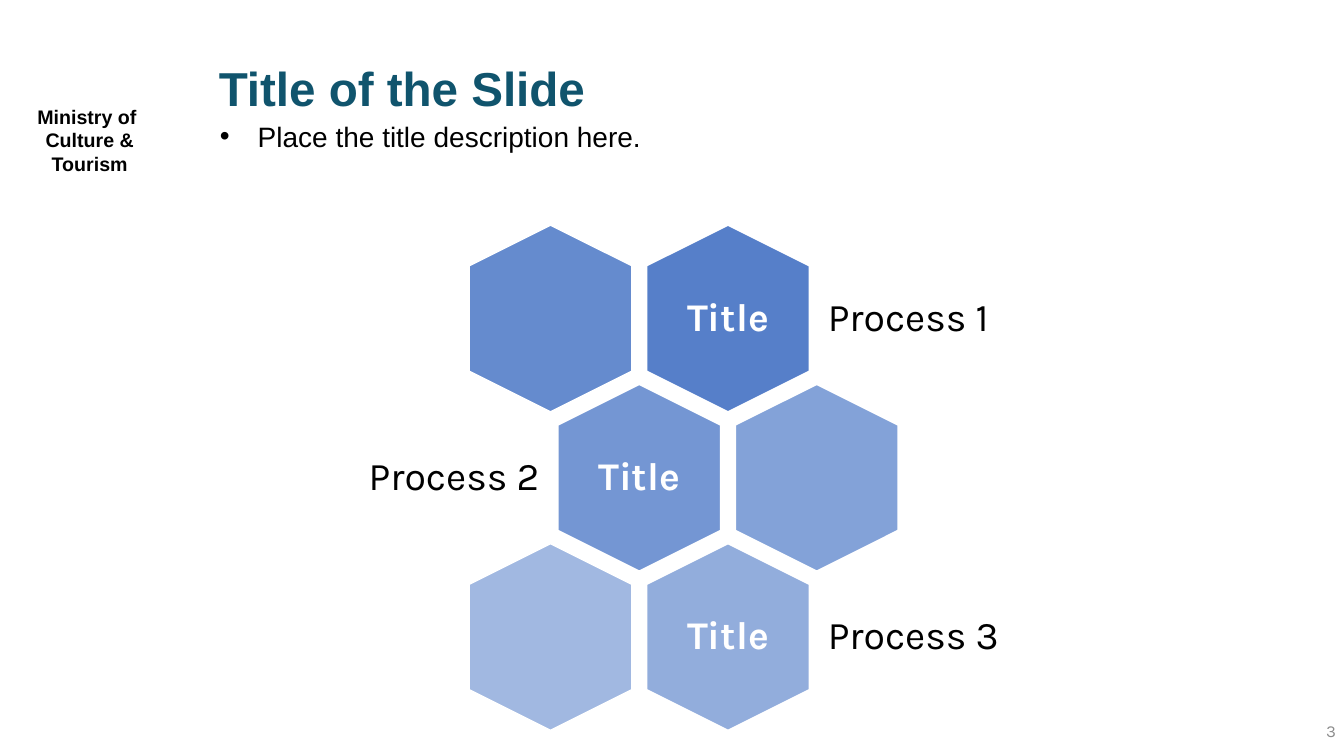
import pptx
import pptx.dml.color
import pptx.enum.shapes
import pptx.enum.text
import pptx.oxml
import pptx.oxml.ns
import pptx.util

Inches, Pt = pptx.util.Inches, pptx.util.Pt
ALIGN = pptx.enum.text.PP_ALIGN
ANCHOR = pptx.enum.text.MSO_ANCHOR


def color(hex_string):
    return pptx.dml.color.RGBColor.from_string(hex_string)


def write(shape, box, text, font, size, hex_string, bold=False, align=ALIGN.LEFT,
          anchor=ANCHOR.TOP, inset=0.0, spacing=1.0):
    """Place a text shape at box (left, top, width, height) and fill it, one paragraph a line."""
    shape.left, shape.top, shape.width, shape.height = map(Inches, box)
    frame = shape.text_frame
    frame.text = text
    frame.word_wrap = True
    frame.auto_size = pptx.enum.text.MSO_AUTO_SIZE.NONE
    frame.vertical_anchor = anchor
    frame.margin_left = frame.margin_right = Inches(inset)
    frame.margin_top = frame.margin_bottom = Inches(inset)
    for paragraph in frame.paragraphs:
        paragraph.alignment = align
        paragraph.line_spacing = spacing
        paragraph.space_before = Pt(0)
        paragraph.font.name = font
        paragraph.font.size = Pt(size)
        paragraph.font.bold = bold
        paragraph.font.color.rgb = color(hex_string)


presentation = pptx.Presentation()
presentation.slide_width = Inches(13.33)
presentation.slide_height = Inches(7.5)
slide = presentation.slides.add_slide(presentation.slide_layouts[1])
shapes = slide.shapes

# Heading
write(shapes.title, (2.17, 0.6, 8.38, 0.53), "Title of the Slide", "Arial", 34, "10546D",
      bold=True, spacing=Pt(40))
description = slide.placeholders[1]
properties = description.text_frame.paragraphs[0]._p.get_or_add_pPr()
properties.set("marL", "0")
properties.set("indent", "0")
pptx.oxml.ns.qn("a:buNone")
properties.append(pptx.oxml.parse_xml(
    '<a:buNone xmlns:a="http://schemas.openxmlformats.org/drawingml/2006/main"/>'))
write(description, (2.18, 1.29, 8.45, 0.68), "Place the title description here.", "Arial", 20,
      "000000", spacing=Pt(16.5))
ministry = shapes.add_textbox(0, 0, 0, 0)
write(ministry, (0, 0.99, 1.78, 0.8), "Ministry of \nCulture & Tourism", "Arial", 14, "000000",
      bold=True, align=ALIGN.CENTER)
ministry.text_frame.margin_left = ministry.text_frame.margin_right = Inches(0.1)
ministry.text_frame.margin_top = Inches(0.05)

# Honeycomb: odd rows are shifted by half a hexagon pitch
FIRST_X, FIRST_Y = 5.46, 3.16
HALF_PITCH, ROW_PITCH = 0.88, 1.58
HEX_LENGTH, HEX_WIDTH = 1.86, 1.62
LABEL_GAP, LABEL_WIDTH, LABEL_HEIGHT = 0.87, 2.08, 1.12
cells = [  # half column, row, label
    (2, 0, "Process 1"), (0, 0, None),
    (1, 1, "Process 2"), (3, 1, None),
    (2, 2, "Process 3"), (0, 2, None),
]
for index, (half_column, row, label) in enumerate(cells):
    x = FIRST_X + half_column * HALF_PITCH
    y = FIRST_Y + row * ROW_PITCH
    hexagon = shapes.add_shape(
        pptx.enum.shapes.MSO_SHAPE.HEXAGON, Inches(x - HEX_LENGTH / 2),
        Inches(y - HEX_WIDTH / 2), Inches(HEX_LENGTH), Inches(HEX_WIDTH))
    hexagon.rotation = 90
    hexagon.shadow.inherit = False
    hexagon.fill.solid()
    hexagon.fill.fore_color.rgb = color("4472C4")
    fill_color = hexagon._element.spPr.find(".//" + pptx.oxml.ns.qn("a:srgbClr"))
    alpha = fill_color.makeelement(pptx.oxml.ns.qn("a:alpha"), {"val": str(90000 - 8000 * index)})
    fill_color.append(alpha)
    hexagon.line.color.rgb = color("FFFFFF")
    hexagon.line.width = Pt(1.5)
    if label is None:
        continue
    write(shapes.add_textbox(0, 0, 0, 0), (x - 0.56, y - 0.64, 1.12, 1.28), "Title", "Karla", 28,
          "FFFFFF", bold=True, align=ALIGN.CENTER, anchor=ANCHOR.MIDDLE, inset=0.12, spacing=0.9)
    on_left = row % 2 == 1
    label_left = x - LABEL_GAP - LABEL_WIDTH if on_left else x + LABEL_GAP
    write(shapes.add_textbox(0, 0, 0, 0),
          (label_left, y - LABEL_HEIGHT / 2, LABEL_WIDTH, LABEL_HEIGHT), label, "Karla", 28,
          "000000", align=ALIGN.RIGHT if on_left else ALIGN.LEFT, anchor=ANCHOR.MIDDLE,
          inset=0.12, spacing=0.9)

# Page number
write(shapes.add_textbox(0, 0, 0, 0), (10.35, 7.05, 3, 0.4), "3", "Karla", 12, "8C8C8C",
      align=ALIGN.RIGHT, anchor=ANCHOR.MIDDLE, inset=0.1)

presentation.save("out.pptx")
